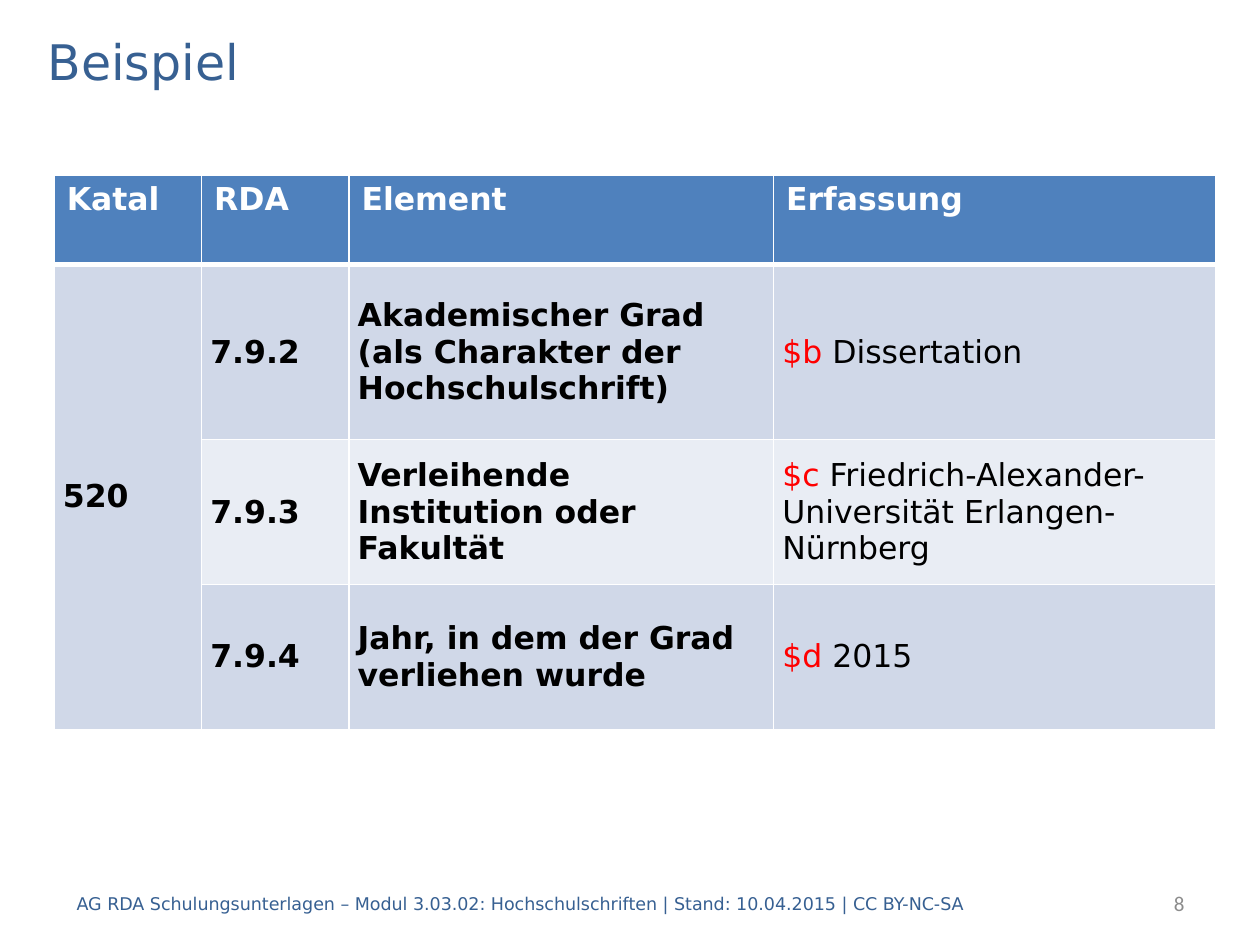
from lxml.etree import SubElement
from pptx import Presentation
from pptx.dml.color import RGBColor
from pptx.enum.text import MSO_ANCHOR, PP_ALIGN
from pptx.oxml.ns import qn
from pptx.util import Inches, Pt

BODY_FONT = "DejaVu Sans"
BLUE = "376092"
HEADER_FILL = "4F81BD"
BAND_FILLS = ["D0D8E8", "E9EDF4"]
COLUMN_WIDTHS = [1.17, 1.17, 3.37, 3.51]
ROW_HEIGHTS = [0.71, 1.39, 1.15, 1.15]
HEADINGS = ["Katal", "RDA", "Element", "Erfassung"]
FIELD = "520"
ENTRIES = [
    ("7.9.2", "Akademischer Grad \v(als Charakter der Hochschulschrift)", "$b", " Dissertation"),
    ("7.9.3", "Verleihende Institution oder Fakultät", "$c ",
     "Friedrich-Alexander-Universität Erlangen-Nürnberg"),
    ("7.9.4", "Jahr, in dem der Grad verliehen wurde", "$d ", "2015"),
]


def color(value):
    return RGBColor.from_string(value)


def set_values(target, values):
    for name, value in values.items():
        setattr(target, name, value)


def add_words(paragraph, words, size, hue, bold=False, font=BODY_FONT):
    for index, line in enumerate(words.split("\v")):
        if index:
            paragraph.add_line_break()
        run = paragraph.add_run()
        run.text = line
        set_values(run.font, {"size": Pt(size), "name": font, "bold": bold})
        run.font.color.rgb = color(hue)


def add_label(slide, box, words, size, hue, font=BODY_FONT, align=PP_ALIGN.LEFT):
    frame = slide.shapes.add_textbox(*map(Inches, box)).text_frame
    set_values(frame, {"word_wrap": True, "vertical_anchor": MSO_ANCHOR.MIDDLE})
    frame.paragraphs[0].alignment = align
    add_words(frame.paragraphs[0], words, size, hue, font=font)


def set_borders(cell, widths):
    properties = cell._tc.get_or_add_tcPr()
    for position, (side, width) in enumerate(widths.items()):
        line = properties.makeelement(qn(f"a:{side}"), {"w": str(Pt(width))})
        fill = SubElement(line, qn("a:solidFill"))
        SubElement(fill, qn("a:srgbClr"), val="FFFFFF")
        properties.insert(position, line)


def fill_cell(cell, parts, fill, header=False):
    cell.fill.solid()
    cell.fill.fore_color.rgb = color(fill)
    paragraph = cell.text_frame.paragraphs[0]
    if not header:
        set_values(cell, {
            "vertical_anchor": MSO_ANCHOR.MIDDLE,
            "margin_left": Inches(0.07), "margin_right": Inches(0.07),
            "margin_top": 0, "margin_bottom": 0,
        })
        paragraph.space_after = Pt(6)
    for words, hue, bold in parts:
        add_words(paragraph, words, 18, hue, bold)


def add_field_table(slide, box):
    table = slide.shapes.add_table(
        len(ROW_HEIGHTS), len(COLUMN_WIDTHS), *map(Inches, box)).table
    for column, width in zip(table.columns, COLUMN_WIDTHS):
        column.width = Inches(width)
    for row, height in zip(table.rows, ROW_HEIGHTS):
        row.height = Inches(height)
    for column, heading in enumerate(HEADINGS):
        fill_cell(table.cell(0, column), [(heading, "FFFFFF", True)], HEADER_FILL, True)
    table.cell(1, 0).merge(table.cell(len(ENTRIES), 0))
    fill_cell(table.cell(1, 0), [(FIELD, "000000", True)], BAND_FILLS[0])
    for row, (number, element, subfield, value) in enumerate(ENTRIES, 1):
        fill = BAND_FILLS[(row - 1) % 2]
        fill_cell(table.cell(row, 1), [(number, "000000", True)], fill)
        fill_cell(table.cell(row, 2), [(element, "000000", True)], fill)
        fill_cell(table.cell(row, 3),
                  [(subfield, "FF0000", False), (value, "000000", False)], fill)
    for index, row in enumerate(table.rows):
        for cell in row.cells:
            set_borders(cell, {"lnL": 1, "lnR": 1, "lnT": 3 if index == 1 else 1,
                               "lnB": 1 if index else 3})


def add_footer(slide, box):
    left, top, width, height = box
    add_label(slide, (left, top, 8.5, height),
              "AG RDA Schulungsunterlagen – Modul 3.03.02: Hochschulschriften"
              " | Stand: 10.04.2015 | CC BY-NC-SA", 10, BLUE)
    number_width = 1.59
    add_label(slide, (left + width - number_width, top, number_width, height),
              "8", 12, "8C8C8C", "Calibri", PP_ALIGN.RIGHT)


def main():
    deck = Presentation()
    set_values(deck, {"slide_width": Inches(10), "slide_height": Inches(7.5)})
    slide = deck.slides.add_slide(deck.slide_layouts[6])
    add_label(slide, (0.28, 0.2, 9.45, 0.56), "Beispiel", 28, BLUE)
    add_field_table(slide, (0.43, 1.39, 9.21, 4.41))
    add_footer(slide, (0.51, 6.97, 8.99, 0.4))
    deck.save("out.pptx")


if __name__ == "__main__":
    main()
